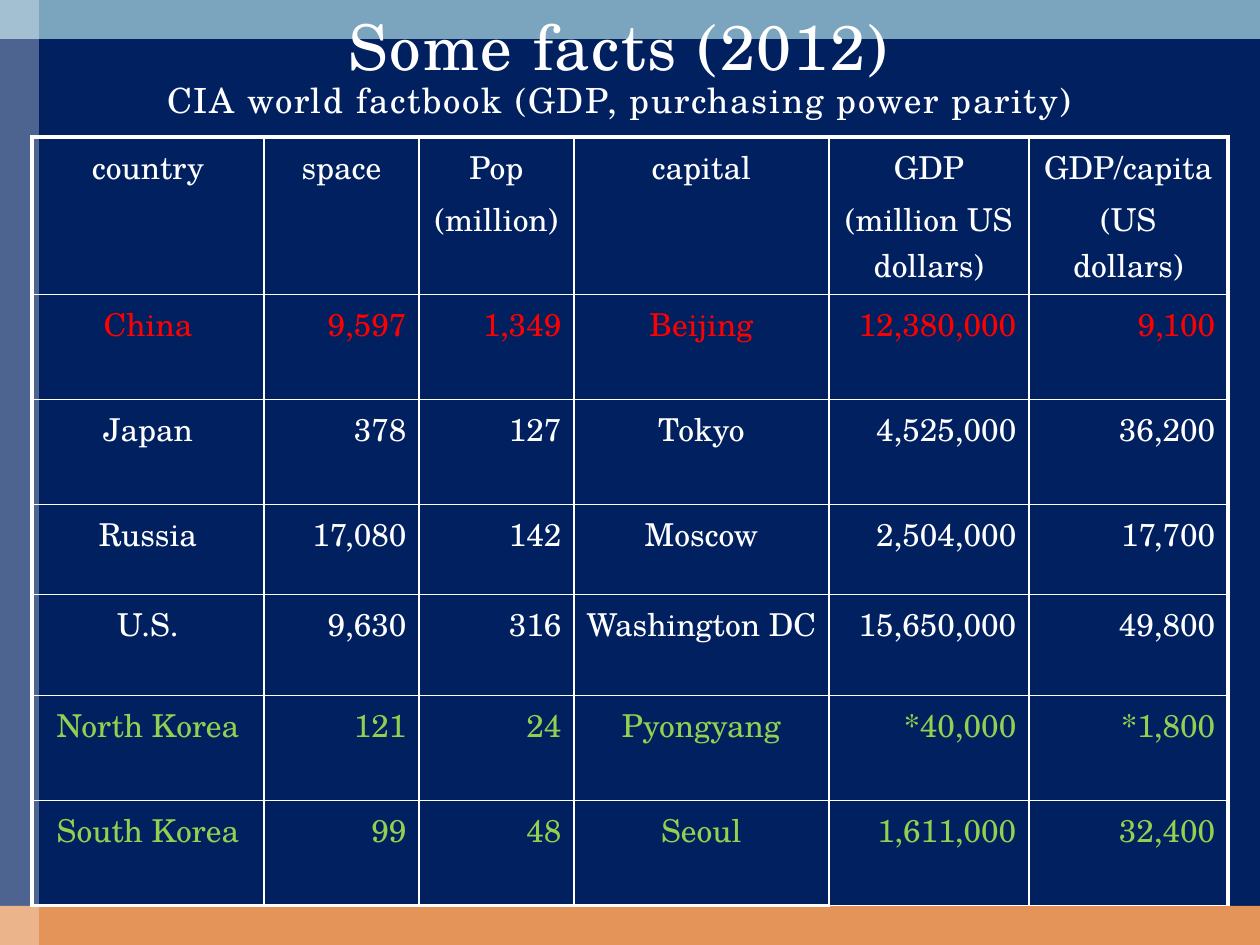
from lxml import etree
from pptx import Presentation
from pptx.dml.color import RGBColor
from pptx.enum import shapes, text
from pptx.oxml import ns
from pptx import util as u

# Content
TITLE = [("Some facts (2012)", 36), ("CIA world factbook (GDP, purchasing power parity)", 19.8)]
HEADER = ["country", "space", "Pop\n(million)", "capital",
          "GDP\n(million US dollars)", "GDP/capita\n(US dollars)"]
COUNTRIES = [
    ("China", "9,597", "1,349", "Beijing", "12,380,000", "9,100"),
    ("Japan", "378", "127", "Tokyo", "4,525,000", "36,200"),
    ("Russia", "17,080", "142", "Moscow", "2,504,000", "17,700"),
    ("U.S.", "9,630", "316", "Washington DC", "15,650,000", "49,800"),
    ("North Korea", "121", "24", "Pyongyang", "*40,000", "*1,800"),
    ("South Korea", "99", "48", "Seoul", "1,611,000", "32,400"),
]
ROW_COLORS = {"China": "FF0000", "North Korea": "92D050", "South Korea": "92D050"}
CENTERED_COLUMNS = (0, 3)

# Layout in px, 126 to the inch
SCALE = 914400 // 126
WIDTH, HEIGHT, BAND = 1260, 945, 39
BANDS = [
    ((0, HEIGHT - BAND, WIDTH, BAND), "E49458", 100),
    ((0, 0, WIDTH, BAND), "7BA5BE", 100),
    ((0, 0, BAND, HEIGHT), "FFFFFF", 30),
]
TITLE_BOX = (42, 21, 1155, 95)
TABLE_LEFT, TABLE_TOP = 32, 137
COLUMN_WIDTHS = [232, 155, 155, 255, 200, 199]
ROW_HEIGHTS = [157, 105, 105, 90, 101, 105, 105]
FONT, WHITE = "TeX Gyre Schola", "FFFFFF"
THIN, THICK = 1, 2.25


def px(*lengths):
    return [u.Emu(length * SCALE) for length in lengths]


def color(hex_value):
    return RGBColor.from_string(hex_value)


def set_all(target, **values):
    for name, value in values.items():
        setattr(target, name, value)


def format_run(run, size, hex_value):
    set_all(run.font, name=FONT, size=u.Pt(size), bold=False)
    run.font.color.rgb = color(hex_value)


def set_borders(cell, widths):
    properties = cell._tc.get_or_add_tcPr()
    for side in "LRTB":
        line = etree.SubElement(properties, ns.qn(f"a:ln{side}"), w=str(u.Pt(widths[side])))
        fill = etree.SubElement(line, ns.qn("a:solidFill"))
        etree.SubElement(fill, ns.qn("a:srgbClr"), val=WHITE)


presentation = Presentation()
presentation.slide_width, presentation.slide_height = px(WIDTH, HEIGHT)
slide = presentation.slides.add_slide(presentation.slide_layouts[5])
slide.background.fill.solid()
slide.background.fill.fore_color.rgb = color("002060")

# Edge bands
for box, hex_value, opacity in BANDS:
    band = slide.shapes.add_shape(shapes.MSO_SHAPE.RECTANGLE, *px(*box))
    band.shadow.inherit = False
    band.line.fill.background()
    band.fill.solid()
    band.fill.fore_color.rgb = color(hex_value)
    if opacity < 100:
        tint = band._element.spPr.find(".//" + ns.qn("a:srgbClr"))
        etree.SubElement(tint, ns.qn("a:alpha"), val=str(opacity * 1000))

# Country table
rows = [HEADER, *COUNTRIES]
last_row, last_column = len(rows) - 1, len(HEADER) - 1
table = slide.shapes.add_table(
    len(rows), len(HEADER),
    *px(TABLE_LEFT, TABLE_TOP, sum(COLUMN_WIDTHS), sum(ROW_HEIGHTS))).table
set_all(table, first_row=False, horz_banding=False)
for column, width in zip(table.columns, px(*COLUMN_WIDTHS)):
    column.width = width
for row, height in zip(table.rows, px(*ROW_HEIGHTS)):
    row.height = height

for r, values in enumerate(rows):
    for c, value in enumerate(values):
        cell = table.cell(r, c)
        set_borders(cell, {
            "L": THICK if c == 0 else THIN,
            "R": THICK if c == last_column else THIN,
            "T": THICK if r == 0 else THIN,
            "B": THICK if r == last_row and c < 4 else THIN,
        })
        cell.fill.background()
        cell.text = value
        centered = r == 0 or c in CENTERED_COLUMNS
        for paragraph in cell.text_frame.paragraphs:
            set_all(paragraph, space_before=u.Pt(3.6),
                    alignment=text.PP_ALIGN.CENTER if centered else text.PP_ALIGN.RIGHT)
            format_run(paragraph.runs[0], 18, ROW_COLORS.get(values[0], WHITE))

# Title, in front of the table
title = slide.shapes.title
slide.shapes._spTree.append(title._element)
set_all(title, **dict(zip(("left", "top", "width", "height"), px(*TITLE_BOX))))
set_all(title.text_frame, word_wrap=True, auto_size=text.MSO_AUTO_SIZE.NONE,
        vertical_anchor=text.MSO_ANCHOR.MIDDLE)
paragraph = title.text_frame.paragraphs[0]
set_all(paragraph, alignment=text.PP_ALIGN.CENTER, line_spacing=0.9)
for i, (line, size) in enumerate(TITLE):
    if i:
        paragraph.add_line_break()
    run = paragraph.add_run()
    run.text = line
    format_run(run, size, WHITE)
    run._r.get_or_add_rPr().set("spc", "100")

presentation.save("out.pptx")
